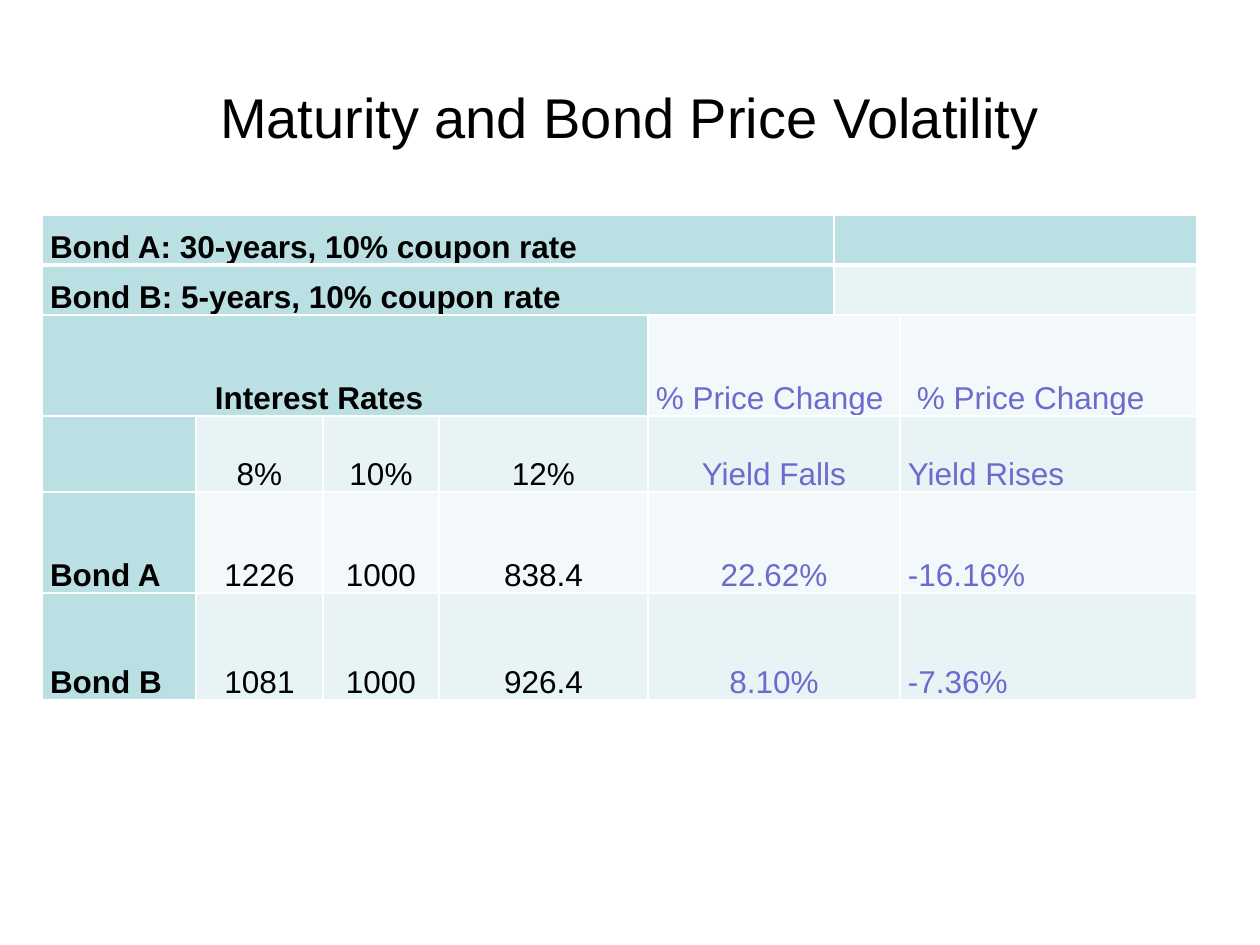
from dataclasses import dataclass

from lxml import etree
from pptx import Presentation
from pptx.dml.color import RGBColor
from pptx.enum.text import MSO_ANCHOR, PP_ALIGN
from pptx.oxml.ns import qn
from pptx.util import Emu, Pt

PX = 914400 / 126
MIDDLE, BOTTOM = MSO_ANCHOR.MIDDLE, MSO_ANCHOR.BOTTOM
LEFT, CENTER = PP_ALIGN.LEFT, PP_ALIGN.CENTER


@dataclass(frozen=True)
class Theme:
    """Colours, font and type sizes of the slide."""
    font: str = "Arial"
    title_size: int = 32
    cell_size: int = 18
    text: str = "000000"
    accent: str = "6B6BCF"
    header: str = "BBE0E3"
    bands: tuple = ("F3F9FA", "E7F3F4")
    border: str = "FFFFFF"


THEME = Theme()
TITLE_BOX = (63, 38, 1134, 157)
TABLE_BOX = (42, 215)
COL_WIDTHS = [154, 127, 116, 209, 186, 66, 297]
ROW_HEIGHTS = [50, 50, 101, 76, 101, 107]
INSET = 8
INDENTS = {"Interest Rates": 173, (2, 6): 17}
CHANGE_COL, LAST_COL, FIRST_RATE_ROW = 4, 6, 3
ROWS = [
    [("Bond A: 30-years, 10% coupon rate", 5), ("", 2)],
    [("Bond B: 5-years, 10% coupon rate", 5), ("", 2)],
    [("Interest Rates", 4), ("% Price Change", 2), ("% Price Change", 1)],
    [("", 1), ("8%", 1), ("10%", 1), ("12%", 1), ("Yield Falls", 2), ("Yield Rises", 1)],
    [("Bond A", 1), ("1226", 1), ("1000", 1), ("838.4", 1), ("22.62%", 2), ("-16.16%", 1)],
    [("Bond B", 1), ("1081", 1), ("1000", 1), ("926.4", 1), ("8.10%", 2), ("-7.36%", 1)],
]


def px(n):
    """Turn px into EMU."""
    return Emu(round(n * PX))


def style_text(tf, size, color, bold, align):
    """Format every run of a text frame."""
    for p in tf.paragraphs:
        p.alignment = align
        p.font.size = Pt(size)
        for r in p.runs:
            r.font.name = THEME.font
            r.font.size = Pt(size)
            r.font.bold = bold
            r.font.color.rgb = RGBColor.from_string(color)


def set_borders(cell, row):
    """Draw the cell borders, heavier between the first two rows."""
    tcPr = cell._tc.get_or_add_tcPr()
    heavy = {(0, "lnB"), (1, "lnT")}
    for i, side in enumerate(("lnL", "lnR", "lnT", "lnB")):
        ln = etree.Element(qn(f"a:{side}"), w=str(Pt(3 if (row, side) in heavy else 1)))
        fill = etree.SubElement(ln, qn("a:solidFill"))
        etree.SubElement(fill, qn("a:srgbClr"), val=THEME.border)
        tcPr.insert(i, ln)


def fill_cell(cell, text, row, col):
    """Write one cell and format it by its place in the grid."""
    header = col == 0 or row == 0
    accent = row >= 2 and col >= CHANGE_COL
    centred = row >= FIRST_RATE_ROW and 0 < col < LAST_COL
    cell.text = text
    cell.vertical_anchor = BOTTOM
    cell.margin_left = px(INDENTS.get(text, INDENTS.get((row, col), INSET)))
    cell.margin_right = px(INSET)
    cell.margin_top = cell.margin_bottom = 0
    cell.fill.solid()
    cell.fill.fore_color.rgb = RGBColor.from_string(
        THEME.header if header else THEME.bands[row % 2])
    style_text(cell.text_frame, THEME.cell_size, THEME.accent if accent else THEME.text,
               col == 0, CENTER if centred else LEFT)


def add_title(s, box, text):
    """Place the slide title in its placeholder."""
    sp = s.shapes.title
    sp.left, sp.top, sp.width, sp.height = map(px, box)
    tf = sp.text_frame
    tf.text = text
    tf.vertical_anchor = MIDDLE
    style_text(tf, THEME.title_size, THEME.text, False, CENTER)


def add_bond_table(s, origin):
    """Place the bond price table with its merged cells."""
    box = (*origin, sum(COL_WIDTHS), sum(ROW_HEIGHTS))
    table = s.shapes.add_table(len(ROW_HEIGHTS), len(COL_WIDTHS), *map(px, box)).table
    table.first_row = table.horz_banding = False
    for column, width in zip(table.columns, COL_WIDTHS):
        column.width = px(width)
    for i, (height, cells) in enumerate(zip(ROW_HEIGHTS, ROWS)):
        table.rows[i].height = px(height)
        col = 0
        for text, span in cells:
            cell = table.cell(i, col)
            if span > 1:
                cell.merge(table.cell(i, col + span - 1))
            fill_cell(cell, text, i, col)
            for j in range(col, col + span):
                set_borders(table.cell(i, j), i)
            col += span


def main():
    """Build and save the slide."""
    prs = Presentation()
    prs.slide_width, prs.slide_height = px(1260), px(945)
    s = prs.slides.add_slide(prs.slide_layouts[5])
    add_title(s, TITLE_BOX, "Maturity and Bond Price Volatility")
    add_bond_table(s, TABLE_BOX)
    prs.save("out.pptx")


if __name__ == "__main__":
    main()
